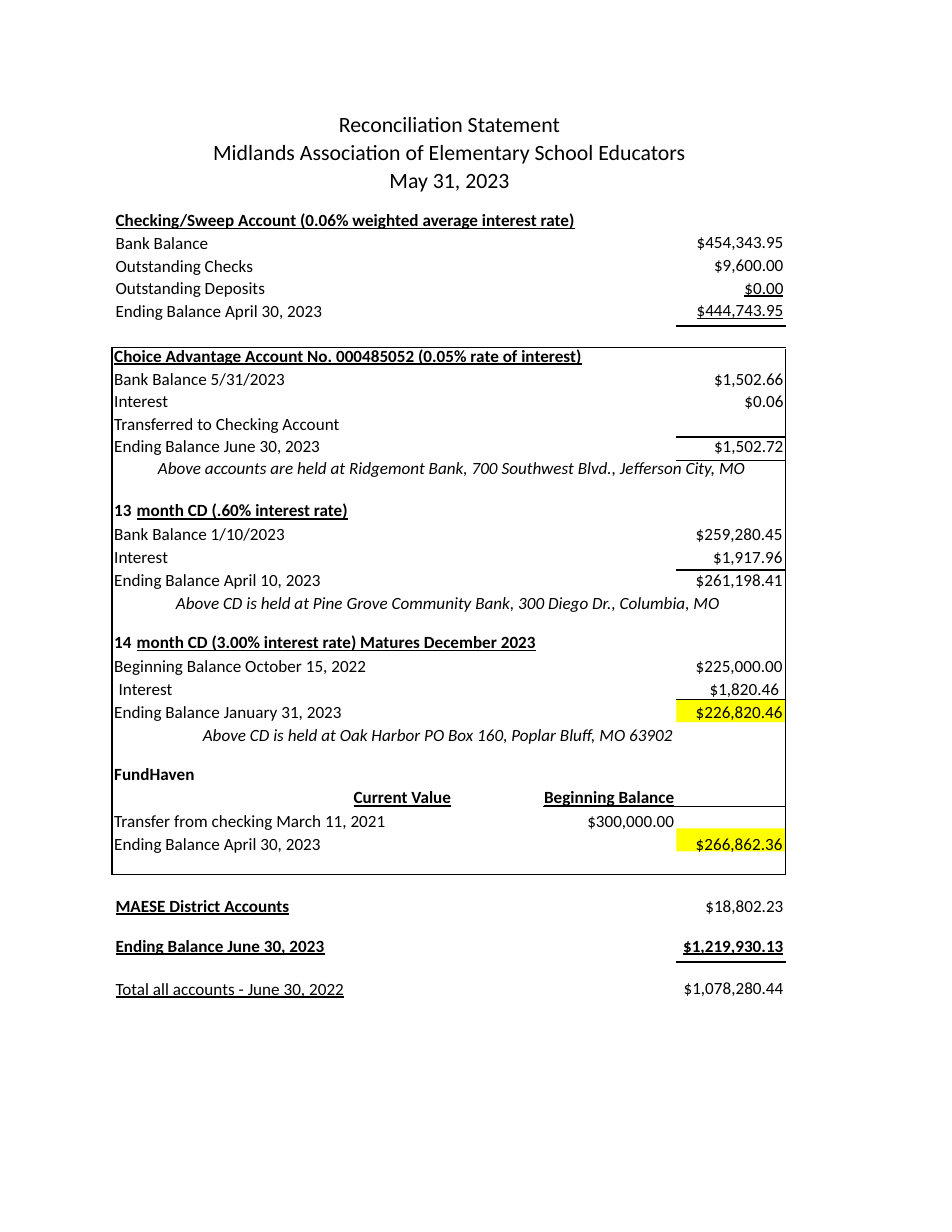
from dataclasses import dataclass, field

from lxml.etree import SubElement
from pptx import Presentation
from pptx.dml.color import RGBColor
from pptx.enum.shapes import MSO_CONNECTOR as Connector, MSO_SHAPE as Shape
from pptx.enum.text import PP_ALIGN as Align
from pptx.oxml.ns import qn
from pptx.util import Cm, Pt


@dataclass(frozen=True)
class Theme:
    font: str = "Calibri"
    ink: str = "000000"
    highlight: str = "FFFF00"
    title: float = 14
    body: float = 11
    rule: float = 0.96
    plain_table: str = "{2D5ABB26-0587-4C30-8999-92F81FD0307C}"


@dataclass(frozen=True)
class Line:
    text: str
    bold: bool = False
    underline: bool = False
    italic: bool = False
    align: Align = Align.LEFT
    size: float = Theme.body
    indent: float = 0
    hanging: float = 0
    exact: float | None = None
    before: float = 0
    tabs: tuple[tuple[float, str], ...] = ()
    number: int | None = None


@dataclass(frozen=True)
class Cell:
    lines: list[Line]
    borders: str = ""
    top: float = 0
    right: float = 0


@dataclass(frozen=True)
class Grid:
    left: float
    top: float
    widths: list[float]
    heights: list[float]
    rows: list[list[Cell]] = field(default_factory=list)


THEME = Theme()
LEFT, RIGHT, AMOUNT_LEFT, AMOUNT_WIDTH = 2.54, 17.82, 15.34, 2.48
INDENT = 0.05
AMOUNT_EDGE, BEGINNING_EDGE = 15.21, 12.75
GAP, SECTION_GAP = 1.3, 11.7


def label(text: str, exact: float | None = 12.2, indent: float = INDENT, **style) -> Line:
    return Line(text, exact=exact, indent=indent, **style)


def amount(text: str, borders: str = "", exact: float | None = 12.2, top: float = 0, **style) -> Cell:
    return Cell([Line(text, align=Align.RIGHT, exact=exact, **style)], borders, top, INDENT)


def entry(text: str, value: str, indent: float = INDENT, edge: float = AMOUNT_EDGE) -> Line:
    return Line(f"{text}\t{value}", indent=indent, before=GAP, tabs=((edge - indent, "r"),))


def note(text: str, indent: float, **style) -> Line:
    return Line(text, italic=True, indent=indent, **style)


def numbered(number: int, text: str, before: float) -> Line:
    return Line(text, bold=True, underline=True, indent=0.56, hanging=0.51,
                before=before, number=number)


def heading(text: str, exact: float | None, indent: float = INDENT) -> Line:
    return label(text, exact, indent, bold=True, underline=True)


TITLE = Grid(4.57, 2.67, [11.25], [0.56, 0.63, 0.56], [
    [Cell([Line(text, align=Align.CENTER, size=THEME.title, exact=exact)])]
    for text, exact in [("Reconciliation Statement", 13.3),
                        ("Midlands Association of Elementary School Educators", 15.3),
                        ("May 31, 2023", 15.3)]])

CHECKING = Grid(2.26, 4.88, [11.2], [0.46, 0.51, 0.51, 0.51, 0.46], [
    [Cell([heading("Checking/Sweep Account (0.06% weighted average interest rate)", 10.5, 0.36)])],
    *[[Cell([label(text, indent=0.36)])] for text in (
        "Bank Balance", "Outstanding Checks", "Outstanding Deposits",
        "Ending Balance April 30, 2023")]])

CHECKING_AMOUNTS = Grid(AMOUNT_LEFT, 5.38, [AMOUNT_WIDTH], [0.46, 0.51, 0.51, 0.53], [
    [amount("$454,343.95", exact=10.5)],
    [amount("$9,600.00")],
    [amount("$0.00", underline=True)],
    [amount("$444,743.95", "B", underline=True)]])

HOLDINGS = [
    note("Above accounts are held at Ridgemont Bank, 700 Southwest Blvd., Jefferson City, MO",
         1.04, exact=12.2),
    numbered(13, "month CD (.60% interest rate)", 13.6),
    entry("Bank Balance 1/10/2023", "$259,280.45"),
    entry("Interest", "$1,917.96"),
    entry("Ending Balance April 10, 2023", "$261,198.41"),
    note("Above CD is held at Pine Grove Community Bank, 300 Diego Dr., Columbia, MO",
         1.45, before=GAP),
    numbered(14, "month CD (3.00% interest rate) Matures December 2023", SECTION_GAP),
    entry("Beginning Balance October 15, 2022", "$225,000.00"),
    entry("Interest", "$1,820.46", indent=0.15),
    entry("Ending Balance January 31, 2023", "$226,820.46"),
    note("Above CD is held at Oak Harbor PO Box 160, Poplar Bluff, MO 63902", 2.06, before=GAP),
    Line("FundHaven", bold=True, indent=INDENT, before=SECTION_GAP),
    Line("Beginning Balance\tCurrent Value", bold=True, underline=True, indent=9.8,
         before=GAP, tabs=((3.13, "l"),)),
    entry("Transfer from checking March 11, 2021", "$300,000.00", edge=BEGINNING_EDGE),
    entry("Ending Balance April 30, 2023", "$266,862.36"),
]

INVESTMENTS = Grid(LEFT, 7.88, [12.8, AMOUNT_WIDTH], [0.53, 0.51, 0.51, 0.48, 0.53, 9.4], [
    [Cell([heading("Choice Advantage Account No. 000485052 (0.05% rate of interest)", 12.7)], "LT")],
    [Cell([label("Bank Balance 5/31/2023")], "L"), amount("$1,502.66")],
    [Cell([label("Interest")], "L"), amount("$0.06")],
    [Cell([label("Transferred to Checking Account")], "L"), amount("", "B")],
    [Cell([label("Ending Balance June 30, 2023", 13.1)], "L"), amount("$1,502.72", "TB", 12.7)],
    [Cell(HOLDINGS, "LB")]])

TOTALS = Grid(LEFT, 20.42, [12.8, AMOUNT_WIDTH], [0.66, 0.74, 0.89], [
    [Cell([heading("MAESE District Accounts", 10.5, 0.08)]), amount("$18,802.23", exact=10.5)],
    [Cell([heading("Ending Balance June 30, 2023", None, 0.08)], top=0.15),
     amount("$1,219,930.13", "B", None, 0.15, bold=True, underline=True)],
    [Cell([label("Total all accounts - June 30, 2022", None, 0.08, underline=True)], top=0.38),
     amount("$1,078,280.44", "T", None, 0.36)]])

RULES = [
    (17.81, 7.92, 17.81, 19.84),
    (AMOUNT_LEFT, 12.93, RIGHT, 12.93),
    (AMOUNT_LEFT, 15.86, RIGHT, 15.86),
    (12.32, 18.29, RIGHT, 18.29),
]


def write_line(para, line: Line) -> None:
    font = para.font
    font.name, font.size = THEME.font, Pt(line.size)
    font.bold, font.italic, font.underline = line.bold, line.italic, line.underline
    font.color.rgb = RGBColor.from_string(THEME.ink)
    para.alignment = line.align
    para.space_before = Pt(line.before)
    if line.exact:
        para.line_spacing = Pt(line.exact)
    if line.text:
        para.add_run().text = line.text
    properties = para._p.get_or_add_pPr()
    properties.set("marL", str(Cm(line.indent)))
    if line.hanging:
        properties.set("indent", str(Cm(-line.hanging)))
    defaults = properties.find(qn("a:defRPr"))
    if line.number:
        bullet = SubElement(properties, qn("a:buAutoNum"), type="arabicPlain",
                            startAt=str(line.number))
        defaults.addprevious(bullet)
    if line.tabs:
        stops = SubElement(properties, qn("a:tabLst"))
        for position, side in line.tabs:
            SubElement(stops, qn("a:tab"), pos=str(Cm(position)), algn=side)
        defaults.addprevious(stops)


def write_cell(target, cell: Cell) -> None:
    target.margin_left = target.margin_bottom = 0
    target.margin_top, target.margin_right = Cm(cell.top), Cm(cell.right)
    properties = target._tc.get_or_add_tcPr()
    for side in cell.borders:
        border = SubElement(properties, qn(f"a:ln{side}"), w=str(Pt(THEME.rule)))
        SubElement(SubElement(border, qn("a:solidFill")), qn("a:srgbClr"), val=THEME.ink)
    target.fill.background()
    frame = target.text_frame
    for index, line in enumerate(cell.lines):
        write_line(frame.add_paragraph() if index else frame.paragraphs[0], line)


def draw_grid(page, grid: Grid) -> None:
    table = page.shapes.add_table(
        len(grid.heights), len(grid.widths), Cm(grid.left), Cm(grid.top),
        Cm(sum(grid.widths)), Cm(sum(grid.heights))).table
    table.first_row = table.horz_banding = False
    table._tbl.tblPr.find(qn("a:tableStyleId")).text = THEME.plain_table
    for column, width in zip(table.columns, grid.widths):
        column.width = Cm(width)
    for index, (height, cells) in enumerate(zip(grid.heights, grid.rows)):
        table.rows[index].height = Cm(height)
        if len(cells) < len(grid.widths):
            table.cell(index, 0).merge(table.cell(index, len(grid.widths) - 1))
        for position, cell in enumerate(cells):
            write_cell(table.cell(index, position), cell)


def draw_highlight(page, top: float) -> None:
    box = page.shapes.add_shape(Shape.RECTANGLE, Cm(AMOUNT_LEFT), Cm(top),
                                Cm(AMOUNT_WIDTH), Cm(0.52))
    box.shadow.inherit = False
    box.fill.solid()
    box.fill.fore_color.rgb = RGBColor.from_string(THEME.highlight)
    box.line.fill.background()


def draw_rule(page, ends: tuple[float, float, float, float]) -> None:
    rule = page.shapes.add_connector(Connector.STRAIGHT, *map(Cm, ends))
    rule.line.width = Pt(THEME.rule)
    rule.line.color.rgb = RGBColor.from_string(THEME.ink)
    SubElement(rule._element.spPr, qn("a:effectLst"))


def main() -> None:
    deck = Presentation()
    deck.slide_width, deck.slide_height = Cm(21.59), Cm(27.94)
    page = deck.slides.add_slide(deck.slide_layouts[6])
    for top in (15.86, 18.79):
        draw_highlight(page, top)
    for grid in (TITLE, CHECKING, CHECKING_AMOUNTS, INVESTMENTS, TOTALS):
        draw_grid(page, grid)
    for ends in RULES:
        draw_rule(page, ends)
    deck.save("out.pptx")


if __name__ == "__main__":
    main()
